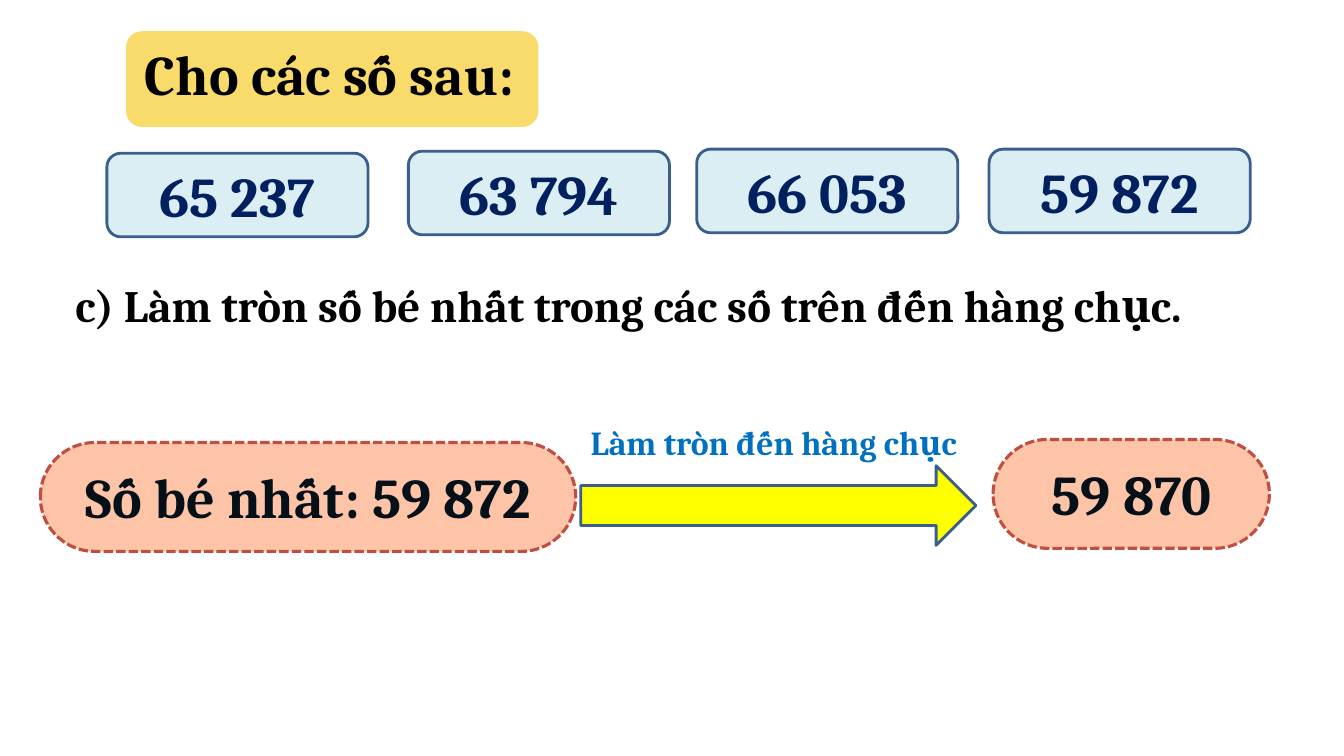
from pptx import Presentation, util as u
from pptx.dml.color import RGBColor
from pptx.enum import dml, shapes, text as t

PX = 9144  # 100 px to the inch
NAVY, DARK, EDGE = "002060", "061018", "3A5F8C"
ROUND = shapes.MSO_SHAPE.ROUNDED_RECTANGLE
MID = t.PP_ALIGN.CENTER


def write(shape, words, size=40, color="000000", align=MID,
          anchor=t.MSO_ANCHOR.TOP):
    frame = shape.text_frame
    frame.word_wrap = True
    frame.auto_size = t.MSO_AUTO_SIZE.NONE
    frame.vertical_anchor = anchor
    para = frame.paragraphs[0]
    para.alignment = align
    run = para.add_run()
    run.text = words
    run.font.name, run.font.size, run.font.bold = "Cambria", u.Pt(size), True
    run.font.color.rgb = RGBColor.from_string(color)


def draw(kind, box, fill, line=None, width=2):
    shape = slide.shapes.add_shape(kind, *[n * PX for n in box])
    shape.shadow.inherit = False
    shape.fill.solid()
    shape.fill.fore_color.rgb = RGBColor.from_string(fill)
    if line:
        shape.line.color.rgb = RGBColor.from_string(line)
        shape.line.width = u.Pt(width)
    else:
        shape.line.fill.background()
    return shape


deck = Presentation()
deck.slide_width, deck.slide_height = 1333 * PX, 750 * PX
slide = deck.slides.add_slide(deck.slide_layouts[5])

# Title on its yellow banner
title = slide.shapes.title
title.left, title.top, title.width, title.height = [
    n * PX for n in (119, 34, 415, 80)]
write(title, "Cho các số sau:")
banner = draw(ROUND, (125, 31, 409, 95), "F9DB6C")
title.element.addprevious(banner.element)

# Given numbers
for left, top, num in [(106, 152, "65 237"), (405, 150, "63 794"),
                       (691, 148, "66 053"), (981, 148, "59 872")]:
    card = draw(ROUND, (left, top, 259, 83), "DBEEF4", EDGE)
    write(card, num, color=NAVY, anchor=t.MSO_ANCHOR.MIDDLE)

# Arrow from the smallest number to the rounded one
draw(shapes.MSO_SHAPE.RIGHT_ARROW, (576, 462, 392, 79), "FFFF00", EDGE)

# Dashed pills
for box in [(40, 439, 531, 108), (985, 436, 274, 108)]:
    pill = draw(ROUND, box, "FDC4A7", "C04E42", 2.25)
    pill.adjustments[0] = 0.5
    pill.line.dash_style = dml.MSO_LINE.SQUARE_DOT

# Question, pill texts and arrow label
for box, words, size, color, align in [
    ((65, 271, 1258, 64),
     "c) Làm tròn số bé nhất trong các số trên đến hàng chục.",
     32, "000000", t.PP_ALIGN.JUSTIFY),
    ((47, 454, 517, 77), "Số bé nhất: 59 872", 40, DARK, MID),
    ((576, 414, 390, 50), "Làm tròn đến hàng chục", 24, "0070C0",
     t.PP_ALIGN.LEFT),
    ((989, 451, 267, 77), "59 870", 40, DARK, MID),
]:
    label = slide.shapes.add_textbox(*[n * PX for n in box])
    write(label, words, size, color, align)

deck.save("out.pptx")
